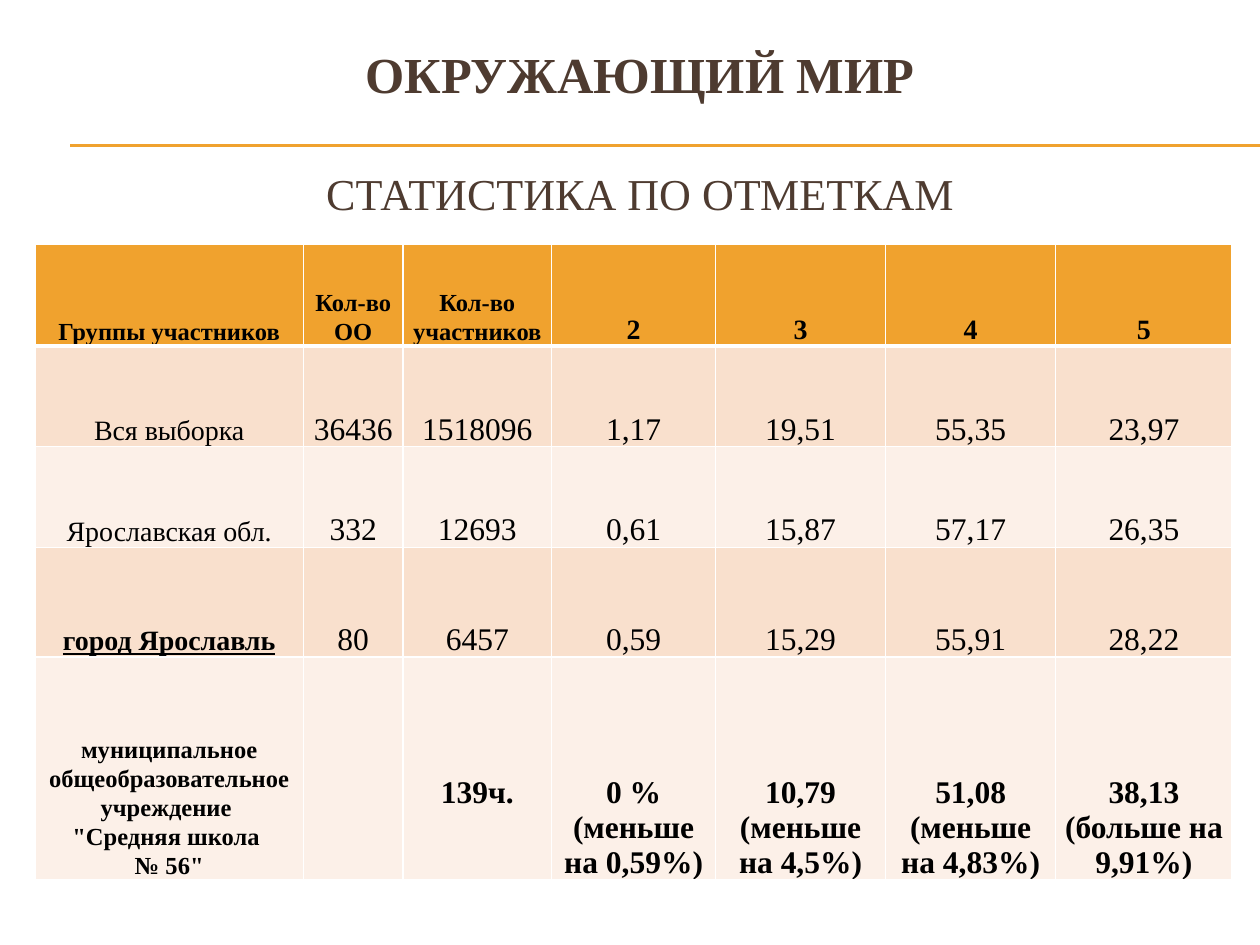
from lxml.etree import SubElement
from pptx import Presentation
from pptx.dml.color import RGBColor
from pptx.enum.shapes import MSO_CONNECTOR as LINE
from pptx.enum.text import MSO_ANCHOR as ANCHOR, PP_ALIGN as ALIGN
from pptx.oxml.ns import qn
from pptx.util import Pt

FONT = "Times New Roman"
BROWN = RGBColor(0x4E, 0x3B, 0x30)
GOLD = RGBColor(0xF0, 0xA2, 0x2E)
PEACH = RGBColor(0xF9, 0xE0, 0xCD)
CREAM = RGBColor(0xFC, 0xF0, 0xE8)
BLACK = RGBColor(0, 0, 0)
WHITE = RGBColor(0xFF, 0xFF, 0xFF)

# Content: title lines as text, size, bold, space before
TITLE = [
    ("ОКРУЖАЮЩИЙ МИР", 28.8, True, 0),
    ("СТАТИСТИКА ПО ОТМЕТКАМ", 25.2, False, 36),
]
ROWS = [
    ["Группы участников", "Кол-во ОО", "Кол-во участников", "2", "3", "4", "5"],
    ["Вся выборка", "36436", "1518096", "1,17", "19,51", "55,35", "23,97"],
    ["Ярославская обл.", "332", "12693", "0,61", "15,87", "57,17", "26,35"],
    ["город Ярославль", "80", "6457", "0,59", "15,29", "55,91", "28,22"],
    ['муниципальное общеобразовательное учреждение \n"Средняя школа \n№ 56"',
     "", "139ч.", "0 % (меньше на 0,59%) ", "10,79 (меньше на 4,5%)",
     "51,08 (меньше на 4,83%)", "38,13 (больше на 9,91%)"],
]
WIDTHS = [153.4, 56.9, 85, 93.6, 97.2, 97.2, 100.8]
HEIGHTS = [58, 57.6, 57.6, 62.6, 127.4]
HEAD, CITY, SCHOOL = 0, 3, 4
RULES = [82.8, 83.5]


def add_run(par, text, size, color, bold, under=False):
    par.alignment = ALIGN.CENTER
    run = par.add_run()
    run.text = text
    font = run.font
    font.name, font.size, font.bold = FONT, Pt(size), bold
    font.underline = under
    font.color.rgb = color


def add_par(frame, index):
    return frame.add_paragraph() if index else frame.paragraphs[0]


def set_edges(cell, head):
    props = cell._tc.get_or_add_tcPr()
    for side in "LRTB":
        width = 3 if head and side == "B" else 1
        edge = SubElement(props, qn(f"a:ln{side}"), w=str(Pt(width)))
        fill = SubElement(edge, qn("a:solidFill"))
        SubElement(fill, qn("a:srgbClr"), val=str(WHITE))


def get_size(row, col):
    if row == HEAD:
        return 14 if col < 3 else 16
    if col == 0:
        return 14 if row == SCHOOL else 16
    return 18


def fill_cell(cell, row, col, text):
    set_edges(cell, row == HEAD)
    cell.fill.solid()
    cell.fill.fore_color.rgb = GOLD if row == HEAD else PEACH if row % 2 else CREAM
    cell.vertical_anchor = ANCHOR.BOTTOM
    cell.margin_left = cell.margin_right = Pt(5)
    cell.margin_top = cell.margin_bottom = 0
    if not text:
        return
    city = row == CITY and col == 0
    bold = row in (HEAD, SCHOOL) or city
    for i, line in enumerate(text.split("\n")):
        par = add_par(cell.text_frame, i)
        if row == HEAD or col == 0:
            par.line_spacing = 1.07
        add_run(par, line, get_size(row, col), BLACK, bold, city)


deck = Presentation()
deck.slide_width, deck.slide_height = Pt(720), Pt(540)
slide = deck.slides.add_slide(deck.slide_layouts[5])
shapes = slide.shapes

# Gold rules
for y in RULES:
    rule = shapes.add_connector(LINE.STRAIGHT, Pt(40.3), Pt(y), Pt(720), Pt(y))
    rule.line.color.rgb = GOLD
    rule.line.width = Pt(0.75)
    SubElement(rule._element.spPr, qn("a:effectLst"))

# Title
title = shapes.title
title.left, title.top = Pt(23.8), Pt(21)
title.width, title.height = Pt(684), Pt(108)
frame = title.text_frame
frame.word_wrap = True
frame.vertical_anchor = ANCHOR.MIDDLE
for i, (text, size, bold, gap) in enumerate(TITLE):
    par = add_par(frame, i)
    par.space_before = Pt(gap)
    add_run(par, text, size, BROWN, bold)

# Table of marks
table = shapes.add_table(len(ROWS), len(WIDTHS), Pt(20), Pt(139.7),
                         Pt(sum(WIDTHS)), Pt(sum(HEIGHTS))).table
for col, width in zip(table.columns, WIDTHS):
    col.width = Pt(width)
for row, height in zip(table.rows, HEIGHTS):
    row.height = Pt(height)
for r, texts in enumerate(ROWS):
    for c, text in enumerate(texts):
        fill_cell(table.cell(r, c), r, c, text)

# Lift the pupil count level with the first line of its neighbours
table.cell(SCHOOL, 2).margin_bottom = Pt(40)

deck.save("out.pptx")
